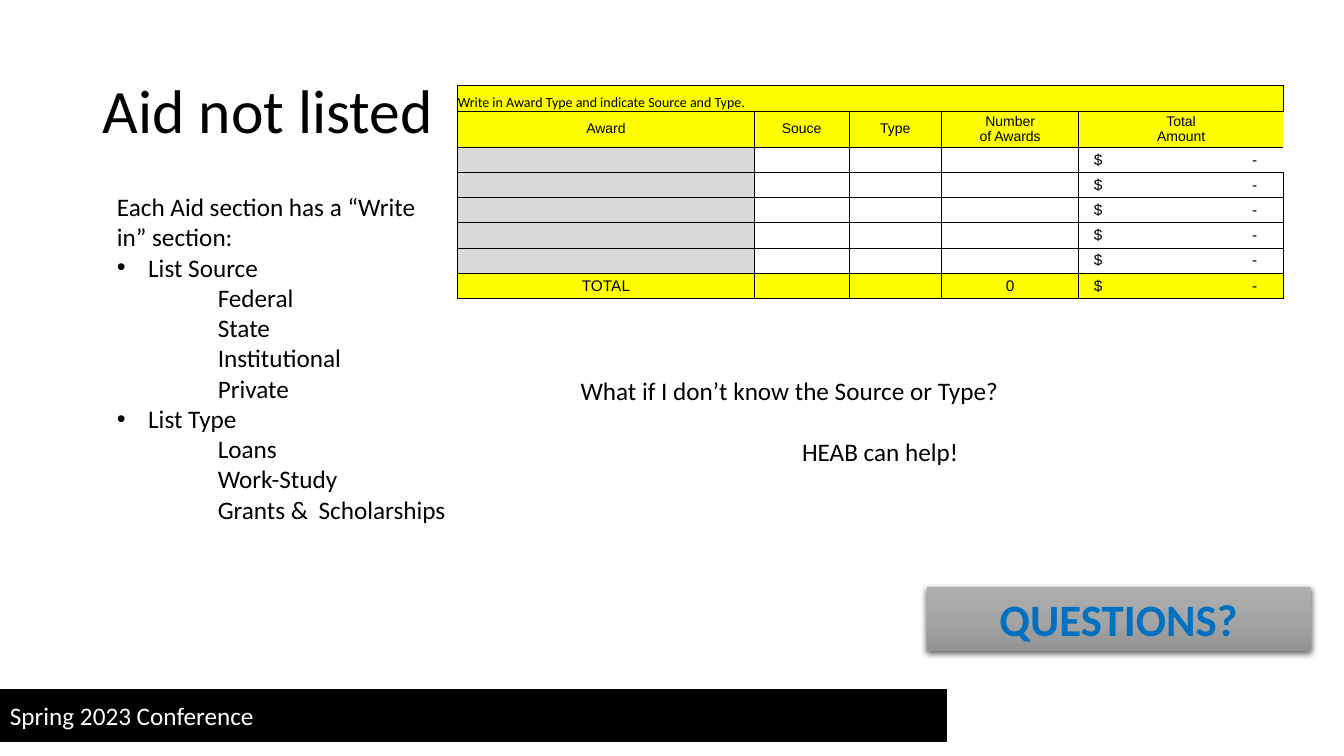
from copy import deepcopy
from dataclasses import dataclass

from lxml.etree import SubElement
from pptx import Presentation
from pptx.dml.color import RGBColor
from pptx.enum.shapes import MSO_SHAPE
from pptx.enum.text import MSO_ANCHOR, MSO_AUTO_SIZE, PP_ALIGN
from pptx.oxml.ns import qn
from pptx.util import Inches, Pt

COLORS = {
    "black": "000000", "white": "FFFFFF", "yellow": "FFFF00", "gray": "D9D9D9",
    "blue": "0070C0", "top": "AFAFAF", "middle": "A5A5A5", "bottom": "939393",
}
MONEY = "$\t-"
HEADINGS = ["Award", "Souce", "Type", "Number\vof Awards", "Total\vAmount"]
COL_WIDTHS = [2.94, 0.94, 0.92, 1.36, 2.03]
AWARD_ROWS = 5


@dataclass
class Item:
    text: str
    indent: float = 0
    bullet: bool = False


@dataclass
class Row:
    texts: list[str]
    fills: list[str | None]
    height: float = 0.25
    size: int = 11
    font: str = "Arial"
    closed: bool = True


ITEMS = [
    Item("Each Aid section has a “Write in” section:"),
    Item("List Source", 0.31, True),
    *[Item(t, 1) for t in ("Federal", "State", "Institutional", "Private")],
    Item("List Type", 0.31, True),
    *[Item(t, 1) for t in ("Loans", "Work-Study", "Grants & \tScholarships")],
]
YELLOW_ROW = ["yellow"] * 5
ROWS = [
    Row(["Write in Award Type and indicate Source and Type.", "", "", "", ""],
        YELLOW_ROW, size=10, font="Calibri"),
    Row(HEADINGS, YELLOW_ROW, height=0.36, size=10, closed=False),
    *[Row(["", "", "", "", MONEY], ["gray", None, None, None, None], closed=i > 0)
      for i in range(AWARD_ROWS)],
    Row(["TOTAL", "", "", "0", MONEY], YELLOW_ROW),
]


def rgb(name: str) -> RGBColor:
    return RGBColor.from_string(COLORS[name])


def write(p, text: str, size: float = 18, font: str = "Calibri", color: str = "black",
          bold: bool = False, align=PP_ALIGN.LEFT, before: float = 0) -> None:
    p.text = text
    p.alignment = align
    p.space_before = Pt(before)
    for r in p.runs:
        r.font.size = Pt(size)
        r.font.name = font
        r.font.bold = bold
        r.font.color.rgb = rgb(color)
    if not text:
        SubElement(p._p, qn("a:endParaRPr"), sz=str(size * 100))


def place(sp, left: float, top: float, width: float, height: float) -> None:
    sp.left, sp.top = Inches(left), Inches(top)
    sp.width, sp.height = Inches(width), Inches(height)


def add_box(s, left: float, top: float, width: float, height: float):
    sp = s.shapes.add_shape(MSO_SHAPE.RECTANGLE, Inches(left), Inches(top),
                            Inches(width), Inches(height))
    sp.shadow.inherit = False
    sp.text_frame.vertical_anchor = MSO_ANCHOR.MIDDLE
    return sp


def set_bullet(p, item: Item) -> None:
    pPr = p._p.get_or_add_pPr()
    pPr.set("marL", str(Inches(item.indent)))
    pPr.set("indent", str(-Inches(item.indent) if item.bullet else 0))
    if item.bullet:
        SubElement(pPr, qn("a:buFont"), typeface="Arial")
        SubElement(pPr, qn("a:buChar"), char="•")
    else:
        SubElement(pPr, qn("a:buNone"))


def set_borders(cell, closed: bool) -> None:
    tcPr = cell._tc.get_or_add_tcPr()
    for side in "LRTB":
        ln = SubElement(tcPr, qn(f"a:ln{side}"), w=str(Pt(0.5)))
        if side == "R" and not closed:
            SubElement(ln, qn("a:noFill"))
        else:
            fill = SubElement(ln, qn("a:solidFill"))
            SubElement(fill, qn("a:srgbClr"), val=COLORS["black"])


def add_award_table(s) -> None:
    gf = s.shapes.add_table(len(ROWS), len(COL_WIDTHS), Inches(4.54), Inches(0.85),
                            Inches(sum(COL_WIDTHS)), Inches(sum(r.height for r in ROWS)))
    table = gf.table
    table.first_row = table.horz_banding = False
    for col, width in zip(table.columns, COL_WIDTHS):
        col.width = Inches(width)
    last = len(COL_WIDTHS) - 1
    for i, row in enumerate(ROWS):
        table.rows[i].height = Inches(row.height)
        for j, (text, fill) in enumerate(zip(row.texts, row.fills)):
            cell = table.cell(i, j)
            money = text == MONEY
            cell.margin_left = Inches(0.15 if money else 0)
            cell.margin_right = cell.margin_top = cell.margin_bottom = 0
            cell.vertical_anchor = MSO_ANCHOR.BOTTOM if i == 0 else MSO_ANCHOR.MIDDLE
            set_borders(cell, row.closed or j < last)
            if fill:
                cell.fill.solid()
                cell.fill.fore_color.rgb = rgb(fill)
            else:
                cell.fill.background()
            p = cell.text_frame.paragraphs[0]
            left = money or i == 0
            write(p, text, row.size, row.font,
                  align=PP_ALIGN.LEFT if left else PP_ALIGN.CENTER)
            if money:
                tabs = SubElement(p._p.get_or_add_pPr(), qn("a:tabLst"))
                SubElement(tabs, qn("a:tab"), pos=str(Inches(1.62)), algn="r")
    table.cell(0, 0).merge(table.cell(0, last))


def add_questions(s) -> None:
    sp = add_box(s, 9.19, 5.82, 3.81, 0.64)
    sp.line.fill.background()
    sp.fill.gradient()
    sp.fill.gradient_angle = 270
    stops = sp._element.spPr.find(".//" + qn("a:gsLst"))
    stops.insert(1, deepcopy(stops[0]))
    for stop, position, color in zip(sp.fill.gradient_stops, (0, 0.5, 1),
                                     ("top", "middle", "bottom")):
        stop.position = position
        stop.color.rgb = rgb(color)
    effects = sp._element.spPr.find(qn("a:effectLst"))
    shadow = SubElement(effects, qn("a:outerShdw"), blurRad=str(Pt(4.5)),
                        dist=str(Pt(1.5)), dir="5400000", algn="ctr", rotWithShape="0")
    clr = SubElement(shadow, qn("a:srgbClr"), val=COLORS["black"])
    SubElement(clr, qn("a:alpha"), val="63000")
    write(sp.text_frame.paragraphs[0], "QUESTIONS?", 32, color="blue", bold=True,
          align=PP_ALIGN.CENTER)


def main() -> None:
    prs = Presentation()
    prs.slide_width, prs.slide_height = Inches(13.33), Inches(7.5)
    s = prs.slides.add_slide(prs.slide_layouts[1])

    bar = add_box(s, 0, 6.84, 9.39, 0.51)
    bar.fill.solid()
    bar.fill.fore_color.rgb = rgb("black")
    bar.line.color.rgb = rgb("black")
    bar.line.width = Pt(1)
    write(bar.text_frame.paragraphs[0], "Spring 2023 Conference", color="white")

    title = s.shapes.title
    place(title, 0.92, 0.4, 11.5, 1.45)
    title.text_frame.vertical_anchor = MSO_ANCHOR.MIDDLE
    p = title.text_frame.paragraphs[0]
    write(p, "Aid not listed", 44)
    p.line_spacing = 0.9

    add_award_table(s)

    body = s.placeholders[1]
    place(body, 1.06, 1.85, 3.48, 4.95)
    tf = body.text_frame
    tf.auto_size = MSO_AUTO_SIZE.NONE
    for i, item in enumerate(ITEMS):
        p = tf.add_paragraph() if i else tf.paragraphs[0]
        write(p, item.text)
        set_bullet(p, item)

    tf = s.shapes.add_textbox(Inches(5.66), Inches(3.67), Inches(6.14), Inches(1.01)).text_frame
    tf.word_wrap = True
    write(tf.paragraphs[0], "What if I don’t know the Source or Type?")
    write(tf.add_paragraph(), "HEAB can help!", align=PP_ALIGN.CENTER, before=22)

    add_questions(s)
    prs.save("out.pptx")


if __name__ == "__main__":
    main()
